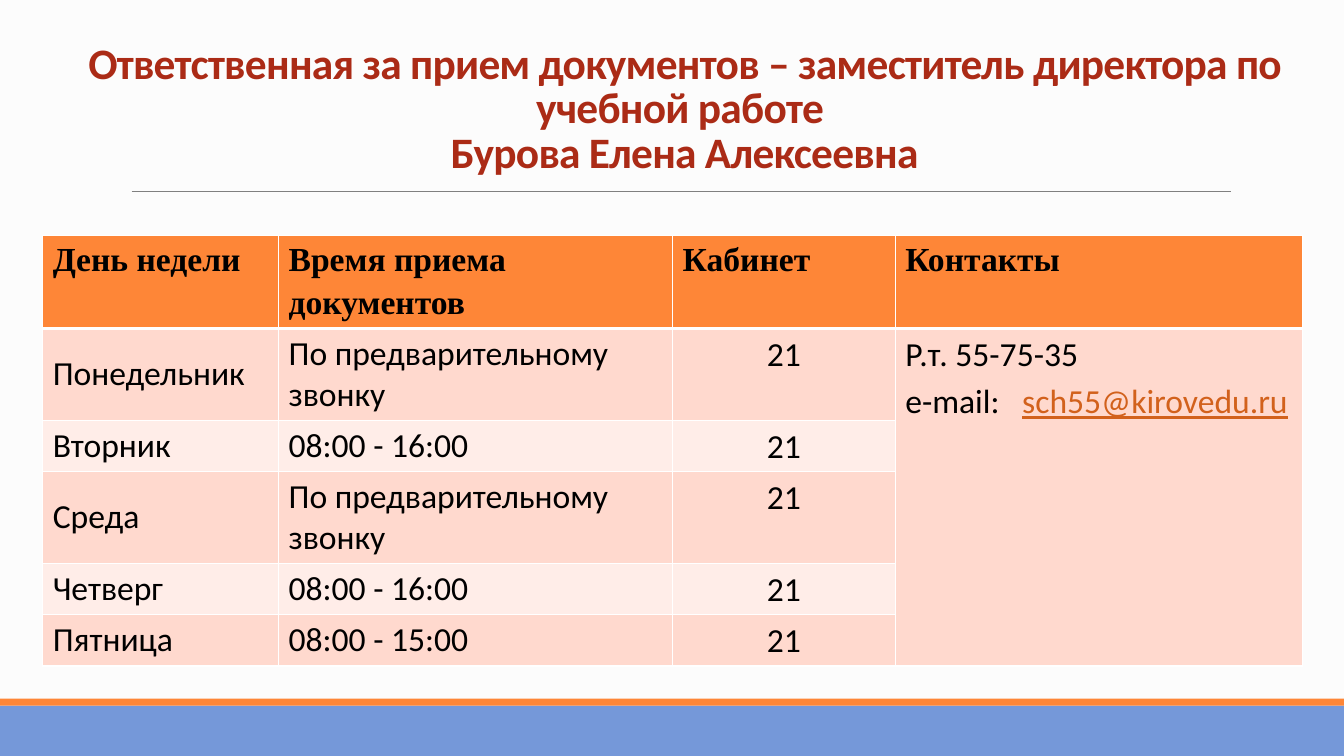
from lxml import etree
from pptx import Presentation
from pptx.dml.color import RGBColor
from pptx.enum.shapes import MSO_CONNECTOR as Connector, MSO_SHAPE as Shape
from pptx.enum.text import MSO_ANCHOR as Anchor, PP_ALIGN as Align
from pptx.oxml.ns import qn
from pptx.util import Pt

COLORS = {
    "background": "FCFCFC", "blue": "7598D9", "orange": "FE8637", "rule": "808080",
    "title": "AB2B16", "text": "000000", "link": "D2611C", "white": "FFFFFF",
    "odd": "FFD9CE", "even": "FFEDE8",
}
WIDTH, HEIGHT = 960, 540
HEADERS = ["День недели", "Время приема документов", "Кабинет", "Контакты"]
SCHEDULE = [
    ("Понедельник", "По предварительному звонку", "21"),
    ("Вторник", "08:00 - 16:00", "21"),
    ("Среда", "По предварительному звонку", "21"),
    ("Четверг", "08:00 - 16:00", "21"),
    ("Пятница", "08:00 - 15:00", "21"),
]
COLUMN_WIDTHS = [168.5, 281.5, 159, 291]
ROW_HEIGHTS = [61, 65.5, 36.7, 65.5, 36.7, 36.7]


def rgb(name):
    return RGBColor.from_string(COLORS[name])


def add_text(paragraph, text, size=24, font="Calibri", color="text", bold=False,
             underline=False, align=Align.LEFT, line_spacing=1.0, tracking=0):
    paragraph.alignment = align
    paragraph.line_spacing = line_spacing
    for index, line in enumerate(text.split("\n")):
        if index:
            paragraph.add_line_break()
        run = paragraph.add_run()
        run.text = line
        run.font.size = Pt(size)
        run.font.name = font
        run.font.bold = bold
        run.font.underline = underline
        run.font.color.rgb = rgb(color)
        if tracking:
            run.font._element.set("spc", str(int(tracking * 100)))


def add_band(slide, left, top, width, height, color):
    band = slide.shapes.add_shape(Shape.RECTANGLE, Pt(left), Pt(top), Pt(width), Pt(height))
    band.shadow.inherit = False
    band.fill.solid()
    band.fill.fore_color.rgb = rgb(color)
    band.line.fill.background()


def add_footer(slide, left, top, width, height):
    stripe = 5
    add_band(slide, left, top + stripe, width, height - stripe, "blue")
    add_band(slide, left, top, width, stripe, "orange")


def add_title(slide, left, top, width, height):
    box = slide.shapes.add_textbox(Pt(left), Pt(top), Pt(width), Pt(height))
    frame = box.text_frame
    frame.word_wrap = True
    frame.vertical_anchor = Anchor.BOTTOM
    add_text(frame.paragraphs[0],
             "Ответственная за прием документов – заместитель директора по учебной работе \n"
             "Бурова Елена Алексеевна",
             size=31, color="title", bold=True, align=Align.CENTER,
             line_spacing=0.85, tracking=-0.5)
    # Rule under the title
    rule_left, rule_y = left + 46, top + height + 7
    rule = slide.shapes.add_connector(Connector.STRAIGHT, Pt(rule_left), Pt(rule_y),
                                      Pt(rule_left + 785), Pt(rule_y))
    rule.line.color.rgb = rgb("rule")
    rule.line.width = Pt(0.5)
    etree.SubElement(rule._element.spPr, qn("a:effectLst"))


def style_cell(cell, fill, side=7.2, edge=0, anchor=Anchor.TOP, top_line=1, bottom_line=1):
    cell.margin_left = cell.margin_right = Pt(side)
    cell.margin_top = cell.margin_bottom = Pt(edge)
    cell.vertical_anchor = anchor
    cell.fill.solid()
    cell.fill.fore_color.rgb = rgb(fill)
    # Borders go before the fill in the cell properties
    properties = cell._tc.get_or_add_tcPr()
    widths = {"lnL": 1, "lnR": 1, "lnT": top_line, "lnB": bottom_line}
    for position, (tag, width) in enumerate(widths.items()):
        border = etree.Element(qn(f"a:{tag}"), w=str(Pt(width)))
        solid = etree.SubElement(border, qn("a:solidFill"))
        etree.SubElement(solid, qn("a:srgbClr"), val=COLORS["white"])
        properties.insert(position, border)


def add_contacts(cell):
    phone = cell.text_frame.paragraphs[0]
    add_text(phone, "Р.т. 55-75-35", line_spacing=1.15)
    email = cell.text_frame.add_paragraph()
    add_text(email, "e-mail:\t", line_spacing=1.15)
    add_text(email, "sch55@kirovedu.ru", color="link", underline=True, line_spacing=1.15)
    # Tab stop that aligns the address
    tabs = etree.SubElement(email._p.get_or_add_pPr(), qn("a:tabLst"))
    etree.SubElement(tabs, qn("a:tab"), pos=str(Pt(83.5)), algn="l")


def add_schedule(slide, left, top):
    frame = slide.shapes.add_table(len(ROW_HEIGHTS), len(COLUMN_WIDTHS), Pt(left), Pt(top),
                                   Pt(sum(COLUMN_WIDTHS)), Pt(sum(ROW_HEIGHTS)))
    table = frame.table
    for column, width in zip(table.columns, COLUMN_WIDTHS):
        column.width = Pt(width)
    for row, height in zip(table.rows, ROW_HEIGHTS):
        row.height = Pt(height)

    # Header row
    for index, header in enumerate(HEADERS):
        cell = table.cell(0, index)
        style_cell(cell, "orange", bottom_line=3)
        add_text(cell.text_frame.paragraphs[0], header, font="Times New Roman",
                 bold=True, line_spacing=1.15)

    # Days, hours and rooms
    for number, entry in enumerate(SCHEDULE, start=1):
        fill = "odd" if number % 2 else "even"
        top_line = 3 if number == 1 else 1
        for index, text in enumerate(entry):
            cell = table.cell(number, index)
            paragraph = cell.text_frame.paragraphs[0]
            if index == 2:
                style_cell(cell, fill, side=5, top_line=top_line)
                add_text(paragraph, text, align=Align.CENTER, line_spacing=1.15)
            else:
                style_cell(cell, fill, edge=3.6, anchor=Anchor.MIDDLE, top_line=top_line)
                add_text(paragraph, text)
        style_cell(table.cell(number, 3), "odd", top_line=top_line)

    # Contacts beside all days
    contacts = table.cell(1, 3)
    contacts.merge(table.cell(len(SCHEDULE), 3))
    add_contacts(contacts)


def main():
    presentation = Presentation()
    presentation.slide_width, presentation.slide_height = Pt(WIDTH), Pt(HEIGHT)
    slide = presentation.slides.add_slide(presentation.slide_layouts[6])
    slide.background.fill.solid()
    slide.background.fill.fore_color.rgb = rgb("background")
    add_footer(slide, 0, 499, WIDTH, HEIGHT - 499)
    add_title(slide, 48, 21.5, 882, 108.5)
    add_schedule(slide, 30.5, 168.5)
    presentation.save("out.pptx")


if __name__ == "__main__":
    main()
